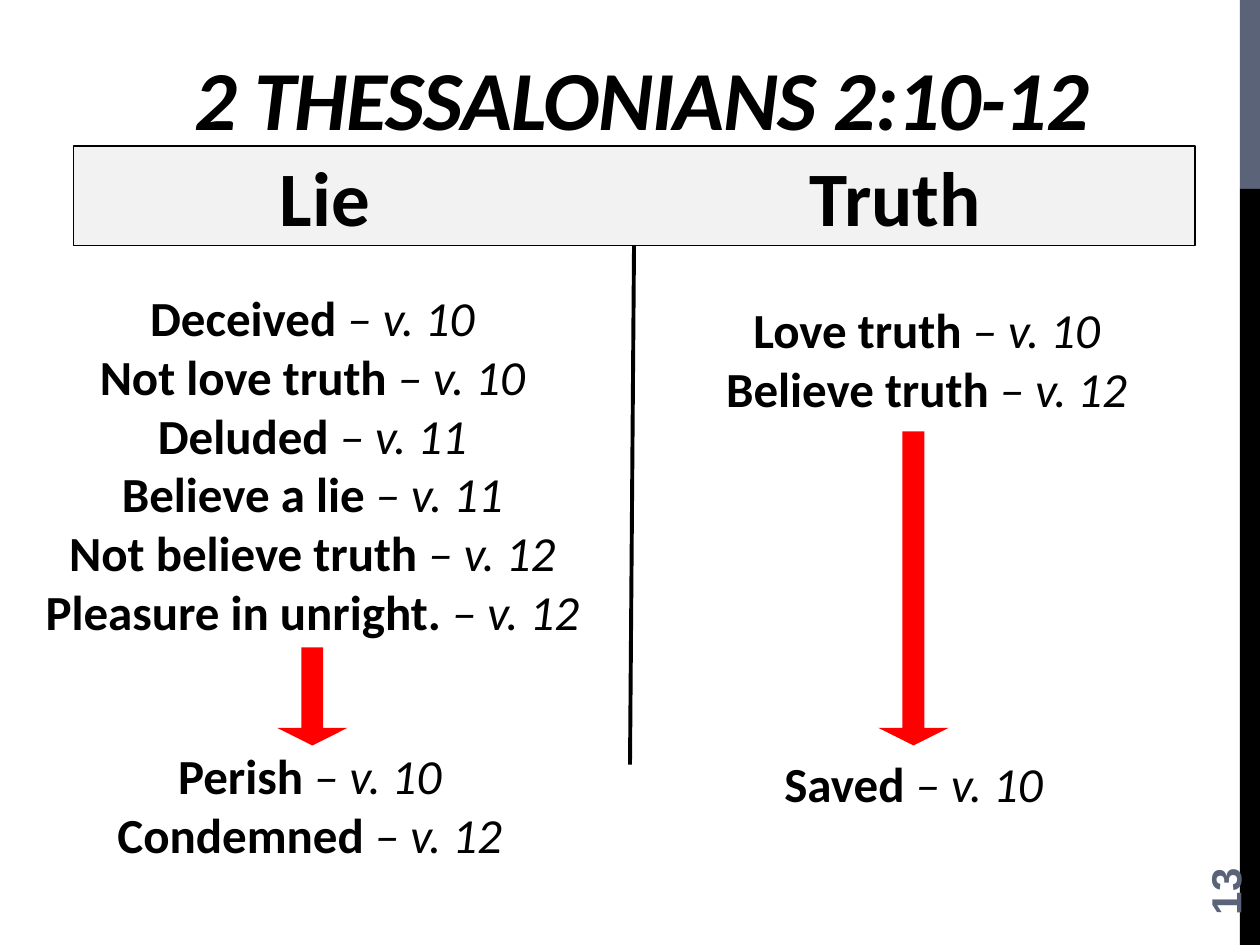
"""Build the slide that sets the lie against the truth."""
from lxml.etree import SubElement as Sub
from pptx import Presentation
from pptx.dml.color import RGBColor
from pptx.enum.shapes import MSO_CONNECTOR as Link, MSO_SHAPE as Kind
from pptx.enum.text import MSO_ANCHOR as Anchor, MSO_AUTO_SIZE as Fit, PP_ALIGN as Align
from pptx.oxml.ns import qn
from pptx.util import Pt

BLACK = RGBColor(0x00, 0x00, 0x00)
SLATE = RGBColor(0x5A, 0x63, 0x78)
PALE = RGBColor(0xF2, 0xF2, 0xF2)
RED = RGBColor(0xFF, 0x00, 0x00)


class Deck:
    def __init__(self, slide, face="Calibri", size=28):
        self.slide = slide
        self.shapes = slide.shapes
        self.face = face
        self.size = size

    def place(self, item, left, top, width, height):
        item.left, item.top = Pt(left), Pt(top)
        item.width, item.height = Pt(width), Pt(height)

    def style(self, para, size=None, color=BLACK, face=None, bold=None):
        font = para.font
        font.name = face or self.face
        font.size = Pt(size or self.size)
        font.color.rgb = color
        font.bold = bold

    def title(self, text, *area):
        item = self.shapes.title
        self.place(item, *area)
        frame = item.text_frame
        frame.auto_size = Fit.NONE
        frame.vertical_anchor = Anchor.BOTTOM
        para = frame.paragraphs[0]
        para.alignment = Align.CENTER
        run = para.add_run()
        run.text = text
        self.style(para, 48, bold=True)
        para.font.italic = True
        run._r.get_or_add_rPr().set("spc", "-60")

    def box(self, kind, fill, *area, line=None):
        item = self.shapes.add_shape(kind, *map(Pt, area))
        item.shadow.inherit = False
        item.fill.solid()
        item.fill.fore_color.rgb = fill
        if line is None:
            item.line.fill.background()
        else:
            item.line.color.rgb = line
            item.line.width = Pt(0.75)
        return item

    def head(self, left, right, inset, tab, *area):
        item = self.box(Kind.RECTANGLE, PALE, *area, line=BLACK)
        frame = item.text_frame
        frame.margin_left = Pt(inset)
        frame.vertical_anchor = Anchor.MIDDLE
        para = frame.paragraphs[0]
        para.alignment = Align.LEFT
        tabs = Sub(para._p.get_or_add_pPr(), qn("a:tabLst"))
        Sub(tabs, qn("a:tab"), pos=str(Pt(tab)), algn="l")
        para.add_run().text = f"{left}\t{right}"
        self.style(para, 44, bold=True)
        return item

    def verses(self, rows, *area, item=None):
        item = item or self.shapes.add_textbox(0, 0, 0, 0)
        self.place(item, *area)
        frame = item.text_frame
        frame.word_wrap = True
        frame.auto_size = Fit.NONE
        for num, (text, verse) in enumerate(rows):
            para = frame.add_paragraph() if num else frame.paragraphs[0]
            para.alignment = Align.CENTER
            para.space_before = Pt(0)
            props = para._p.get_or_add_pPr()
            props.set("marL", "0")
            props.set("indent", "0")
            Sub(props, qn("a:buNone"))
            self.style(para)
            lead, note = para.add_run(), para.add_run()
            lead.text, note.text = f"{text} ", f"– v. {verse}"
            lead.font.bold = True
            note.font.italic = True

    def rule(self, start, x, y):
        line = self.shapes.add_connector(Link.STRAIGHT, 0, 0, Pt(x), Pt(y))
        line.begin_connect(start, 2)
        line.line.color.rgb = BLACK
        line.line.width = Pt(2.25)
        Sub(line._element.spPr, qn("a:effectLst"))

    def arrow(self, mid, top, base, width=40.3):
        item = self.box(Kind.DOWN_ARROW, RED, mid - width / 2, top, width, base - top)
        item.adjustments[0] = 0.31
        item.adjustments[1] = 0.25

    def page(self, text, *area):
        item = self.shapes.add_textbox(*map(Pt, area))
        item.rotation = 270
        frame = item.text_frame
        frame.word_wrap = True
        frame.vertical_anchor = Anchor.MIDDLE
        para = frame.paragraphs[0]
        para.add_run().text = text
        self.style(para, 24, SLATE, "Arial", True)


def main():
    show = Presentation()
    show.slide_width, show.slide_height = Pt(720), Pt(540)
    deck = Deck(show.slides.add_slide(show.slide_layouts[3]))
    left, right = list(deck.slide.placeholders)[1:]

    deck.box(Kind.RECTANGLE, SLATE, 708.5, 0, 11.5, 108)
    deck.box(Kind.RECTANGLE, BLACK, 708.5, 108, 11.5, 432)
    deck.title("2 THESSALONIANS 2:10-12", 76.3, 20.2, 581, 67.7)
    head = deck.head("Lie", "Truth", 118, 303, 41.8, 83.5, 641, 57)
    deck.rule(head, 360, 437)

    deck.verses([("Deceived", 10), ("Not love truth", 10), ("Deluded", 11),
                 ("Believe a lie", 11), ("Not believe truth", 12),
                 ("Pleasure in unright.", 12)], 0, 160.6, 357, 211, item=left)
    deck.verses([("Love truth", 10), ("Believe truth", 12)],
                394.5, 167.8, 270, 75, item=right)
    deck.verses([("Perish", 10), ("Condemned", 12)], 47, 422.6, 260, 75)
    deck.verses([("Saved", 10)], 427, 427, 190, 41)

    deck.arrow(178.5, 370, 426)
    deck.arrow(522, 246.5, 426)
    deck.page("13", 648, 463.7, 103.7, 28.8)
    show.save("out.pptx")


if __name__ == "__main__":
    main()
